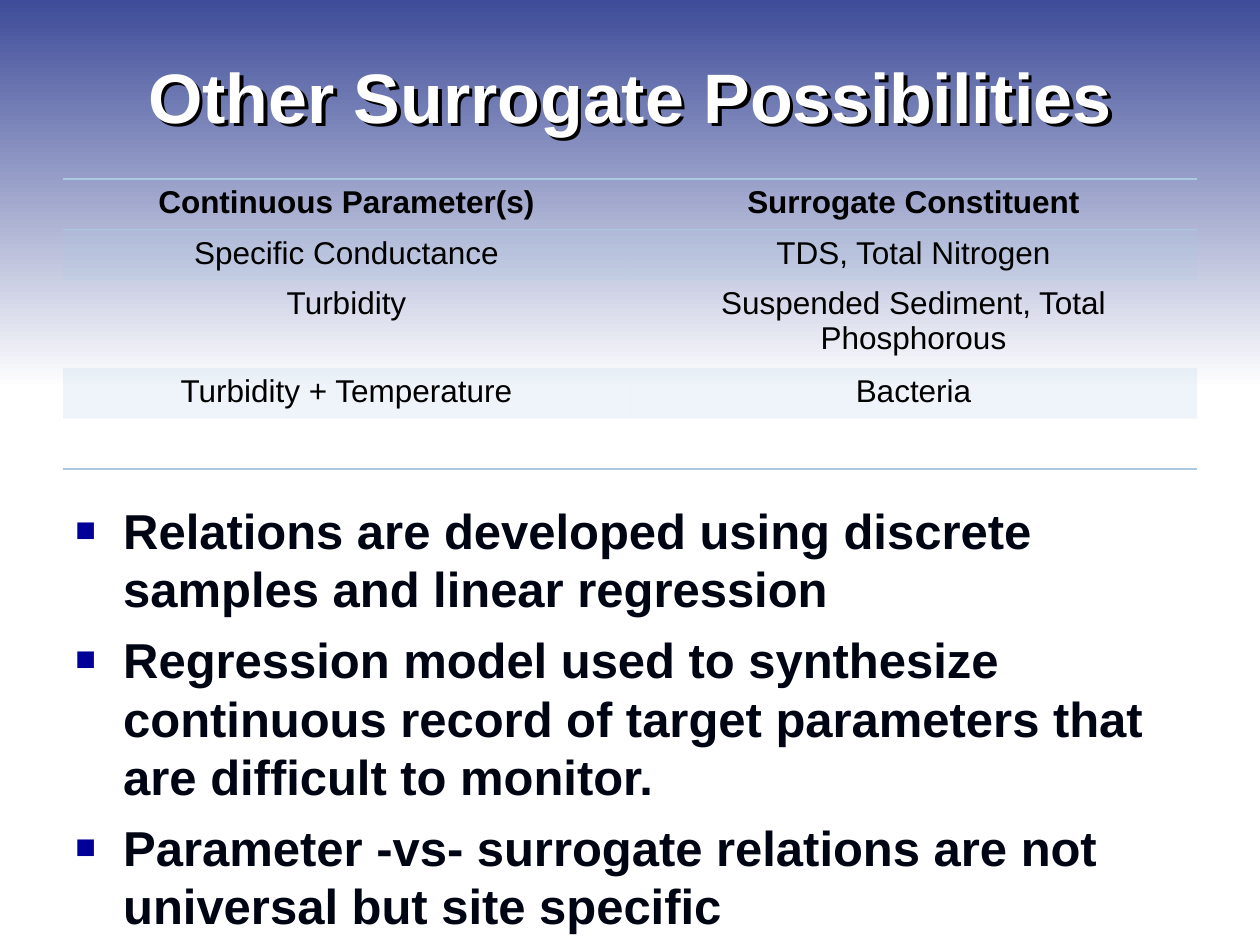
from dataclasses import dataclass
from lxml.etree import SubElement
from pptx import Presentation
from pptx.dml.color import RGBColor
from pptx.enum.shapes import MSO_SHAPE
from pptx.enum.text import MSO_ANCHOR, PP_ALIGN
from pptx.oxml.ns import qn
from pptx.util import Inches, Pt


@dataclass(frozen=True)
class Theme:
    font: str = "Arial"
    sky: str = "3E4C99"
    white: str = "FFFFFF"
    black: str = "000000"
    ink: str = "000514"
    mark: str = "000099"
    rule: str = "AACAE2"
    head: int = 40
    body: int = 28
    cell: int = 18


THEME = Theme()
WIDE, HIGH = Inches(10), Inches(7.5)
UNIT = WIDE // 100
PLAIN = "{2D5ABB26-0587-4C30-8999-92F81FD0307C}"
ROWS = [
    ("Continuous Parameter(s)", "Surrogate Constituent"),
    ("Specific Conductance", "TDS, Total Nitrogen"),
    ("Turbidity", "Suspended Sediment, Total Phosphorous"),
    ("Turbidity + Temperature", "Bacteria"),
    ("", ""),
]
SPANS = [4, 4, 7, 4, 4]
POINTS = [
    "Relations are developed using discrete samples and linear regression",
    "Regression model used to synthesize continuous record of target parameters that are difficult to monitor.",
    "Parameter -vs- surrogate relations are not universal but site specific",
]


def grid(*cells):
    return [int(cell * UNIT) for cell in cells]


def add_run(para, text, size, color, bold=False):
    run = para.add_run()
    run.text = text
    font = run.font
    font.name, font.size, font.bold = THEME.font, Pt(size), bold
    font.color.rgb = RGBColor.from_string(color)


def add_node(root, tag, **attrs):
    return SubElement(root, qn(tag), {key: str(val) for key, val in attrs.items()})


def draw_sky(slide, box):
    sky = slide.shapes.add_shape(MSO_SHAPE.RECTANGLE, *box)
    sky.shadow.inherit = False
    sky.line.fill.background()
    sky.fill.gradient()
    sky.fill.gradient_angle = 270
    for stop, color in zip(sky.fill.gradient_stops, (THEME.sky, THEME.white)):
        stop.color.rgb = RGBColor.from_string(color)


def add_shade(shape):
    list_node = add_node(shape._element.spPr, "a:effectLst")
    shade = add_node(list_node, "a:outerShdw", dist=Pt(3), dir=2700000, algn="tl")
    add_node(shade, "a:srgbClr", val=THEME.black)


def draw_title(slide, box):
    shape = slide.shapes.add_textbox(*box)
    add_shade(shape)
    frame = shape.text_frame
    frame.word_wrap = True
    frame.vertical_anchor = MSO_ANCHOR.MIDDLE
    para = frame.paragraphs[0]
    para.alignment = PP_ALIGN.CENTER
    add_run(para, "Other Surrogate Possibilities", THEME.head, THEME.white, True)


def add_rules(cell, sides):
    props = cell._tc.get_or_add_tcPr()
    for spot, side in enumerate(sides):
        line = add_node(props, f"a:ln{side}", w=Pt(1))
        fill = add_node(line, "a:solidFill")
        add_node(fill, "a:srgbClr", val=THEME.rule)
        props.insert(spot, line)


def tint_cell(cell):
    cell.fill.solid()
    cell.fill.fore_color.rgb = RGBColor.from_string(THEME.rule)
    color = cell._tc.tcPr.find(qn("a:solidFill"))[0]
    add_node(color, "a:alpha", val=20000)


def draw_table(slide, box):
    frame = slide.shapes.add_table(len(ROWS), len(ROWS[0]), *box)
    table = frame.table
    table._tbl.tblPr.find(qn("a:tableStyleId")).text = PLAIN
    step = box[3] / sum(SPANS)
    sides = {0: "TB", len(ROWS) - 1: "B"}
    for row, texts in enumerate(ROWS):
        table.rows[row].height = int(step * SPANS[row])
        for col, text in enumerate(texts):
            cell = table.cell(row, col)
            if row % 2:
                tint_cell(cell)
            else:
                cell.fill.background()
            add_rules(cell, sides.get(row, ""))
            para = cell.text_frame.paragraphs[0]
            para.alignment = PP_ALIGN.CENTER
            if text:
                add_run(para, text, THEME.cell, THEME.black, row == 0)


def add_mark(para):
    props = para._p.get_or_add_pPr()
    dent = Inches(0.38)
    props.set("marL", str(dent))
    props.set("indent", str(-dent))
    color = add_node(props, "a:buClr")
    add_node(color, "a:srgbClr", val=THEME.mark)
    add_node(props, "a:buSzPct", val=70000)
    add_node(props, "a:buFont", typeface=THEME.font)
    add_node(props, "a:buChar", char="■")


def draw_points(slide, box):
    frame = slide.shapes.add_textbox(*box).text_frame
    frame.word_wrap = True
    for rank, text in enumerate(POINTS):
        para = frame.add_paragraph() if rank else frame.paragraphs[0]
        add_mark(para)
        para.line_spacing = 1.0
        if rank:
            para.space_before = Pt(6.5)
        add_run(para, text, THEME.body, THEME.ink, True)


def main():
    deck = Presentation()
    deck.slide_width, deck.slide_height = WIDE, HIGH
    slide = deck.slides.add_slide(deck.slide_layouts[6])
    draw_sky(slide, grid(0, 0, 100, 30.8))
    draw_title(slide, grid(5, 4.2, 90, 6.7))
    draw_table(slide, grid(5, 14.2, 90, 23))
    draw_points(slide, grid(5, 39.2, 90, 35.8))
    deck.save("out.pptx")


if __name__ == "__main__":
    main()
